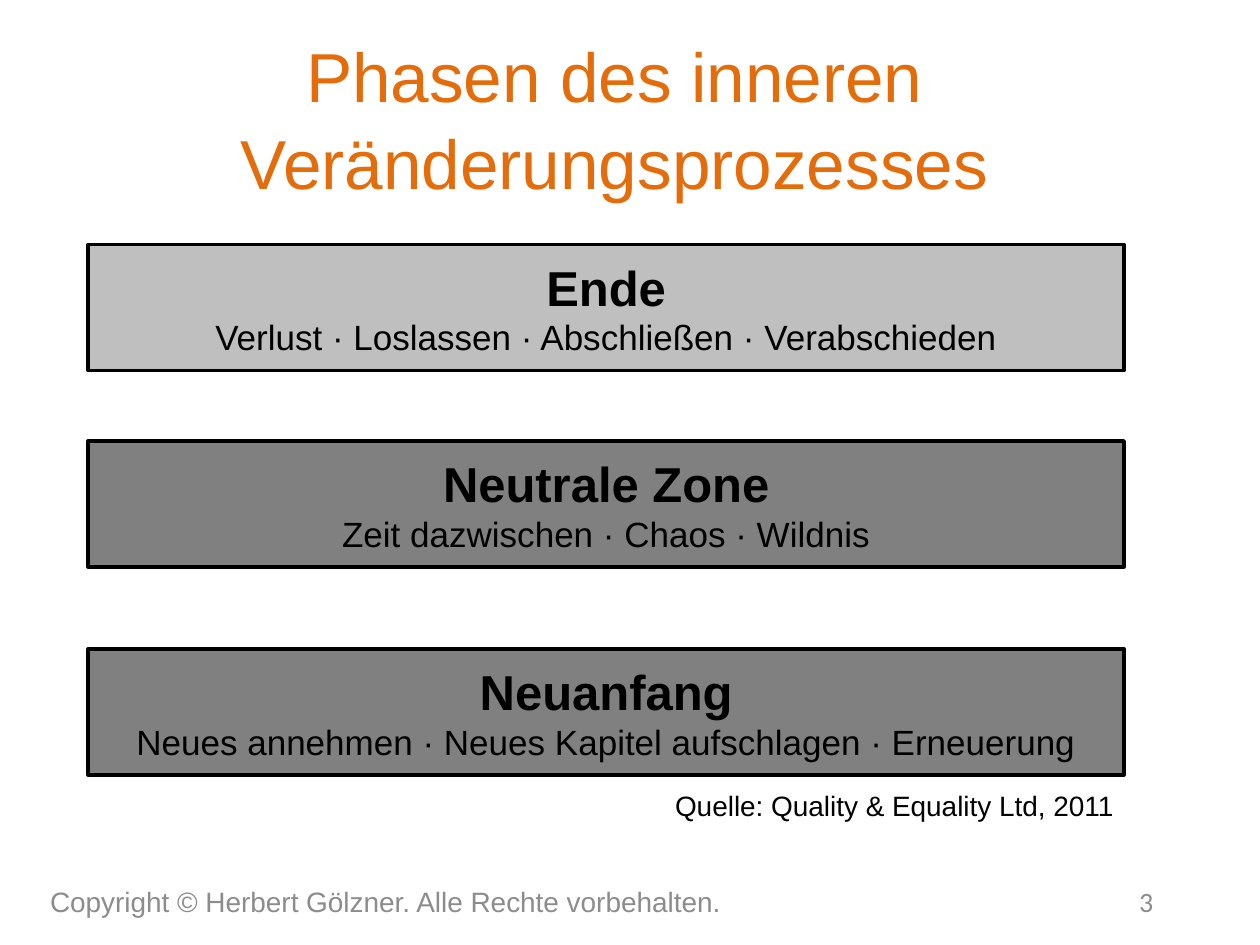
from pptx import Presentation
from pptx.dml.color import RGBColor
from pptx.enum.shapes import MSO_SHAPE
from pptx.enum.text import MSO_ANCHOR, PP_ALIGN
from pptx.util import Cm, Pt


def color(value):
    return RGBColor.from_string(value)


class SlideBuilder:
    TITLE = {"size": Pt(39.6), "name": "Arial", "bold": False}
    HEADING = {"size": Pt(28), "name": "Arial", "bold": True}
    DETAIL = {"size": Pt(20), "name": "Arial", "bold": False}
    SMALL = {"size": Pt(16), "name": "Arial", "bold": False}
    NUMBER = {"size": Pt(16), "name": "Calibri", "bold": False}
    ORANGE, GRAY, BLACK = "E46C0A", "8C8C8C", "000000"

    def __init__(self, presentation):
        self.slide = presentation.slides.add_slide(presentation.slide_layouts[5])

    def fill_paragraph(self, paragraph, text, style, ink, alignment):
        paragraph.text = text
        paragraph.alignment = alignment
        for attribute, value in style.items():
            setattr(paragraph.font, attribute, value)
        paragraph.font.color.rgb = color(ink)

    def title(self, text, left, top, width, height):
        shape = self.slide.shapes.title
        bounds = {"left": left, "top": top, "width": width, "height": height}
        for attribute, value in bounds.items():
            setattr(shape, attribute, Cm(value))
        frame = shape.text_frame
        frame.word_wrap = True
        frame.vertical_anchor = MSO_ANCHOR.MIDDLE
        paragraph = frame.paragraphs[0]
        self.fill_paragraph(paragraph, text, self.TITLE, self.ORANGE, PP_ALIGN.CENTER)
        paragraph.line_spacing = 1.04

    def label(self, text, bounds, style, ink, alignment=PP_ALIGN.LEFT,
              anchor=MSO_ANCHOR.MIDDLE):
        shape = self.slide.shapes.add_textbox(*map(Cm, bounds))
        frame = shape.text_frame
        frame.word_wrap = True
        frame.vertical_anchor = anchor
        self.fill_paragraph(frame.paragraphs[0], text, style, ink, alignment)

    def phase(self, heading, detail, top, fill):
        bounds = map(Cm, (1.78, top, 20.88, 2.54))
        shape = self.slide.shapes.add_shape(MSO_SHAPE.RECTANGLE, *bounds)
        shape.shadow.inherit = False
        shape.fill.solid()
        shape.fill.fore_color.rgb = color(fill)
        shape.line.color.rgb = color(self.BLACK)
        shape.line.width = Pt(2)
        frame = shape.text_frame
        frame.word_wrap = True
        frame.vertical_anchor = MSO_ANCHOR.MIDDLE
        self.fill_paragraph(frame.paragraphs[0], heading, self.HEADING, self.BLACK,
                            PP_ALIGN.CENTER)
        self.fill_paragraph(frame.add_paragraph(), detail, self.DETAIL, self.BLACK,
                            PP_ALIGN.CENTER)


def main():
    presentation = Presentation()
    presentation.slide_width = Cm(25.4)
    presentation.slide_height = Cm(19.05)
    builder = SlideBuilder(presentation)

    builder.title("Phasen des inneren Veränderungsprozesses", 1.27, 0.76, 22.23, 3.18)
    builder.label("Copyright © Herbert Gölzner. Alle Rechte vorbehalten.",
                  (0.76, 17.65, 16.15, 1.02), builder.SMALL, builder.GRAY)
    builder.label("3", (17.58, 17.65, 5.92, 1.02), builder.NUMBER, builder.GRAY,
                  PP_ALIGN.RIGHT)

    phases = [
        ("Ende", "Verlust · Loslassen · Abschließen · Verabschieden", 4.93, "BFBFBF"),
        ("Neutrale Zone", "Zeit dazwischen · Chaos · Wildnis", 8.89, "808080"),
        ("Neuanfang", "Neues annehmen · Neues Kapitel aufschlagen · Erneuerung",
         13.08, "808080"),
    ]
    for phase in phases:
        builder.phase(*phase)

    builder.label("Quelle: Quality & Equality Ltd, 2011", (13.36, 15.77, 10.13, 0.94),
                  builder.SMALL, builder.BLACK, anchor=MSO_ANCHOR.TOP)
    presentation.save("out.pptx")


if __name__ == "__main__":
    main()
